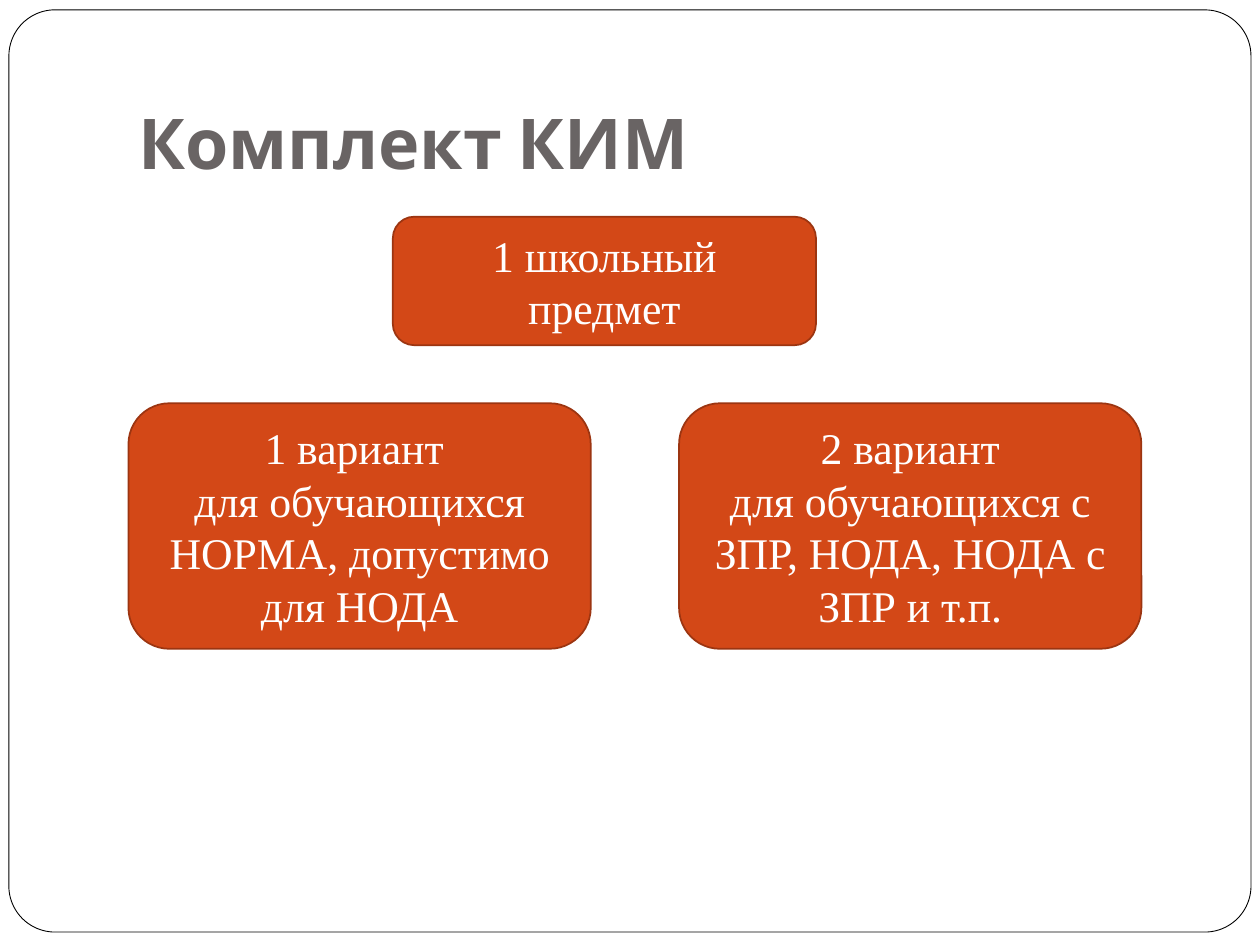
from typing import NamedTuple

from pptx import Presentation
from pptx.dml.color import RGBColor
from pptx.enum.shapes import MSO_SHAPE
from pptx.enum.text import MSO_ANCHOR, MSO_AUTO_SIZE, PP_ALIGN
from pptx.util import Cm, Pt

ROUND = MSO_SHAPE.ROUNDED_RECTANGLE
LEFT, CENTER = PP_ALIGN.LEFT, PP_ALIGN.CENTER
MIDDLE, BOTTOM = MSO_ANCHOR.MIDDLE, MSO_ANCHOR.BOTTOM
NO_FIT = MSO_AUTO_SIZE.NONE


class Area(NamedTuple):
    left: float
    top: float
    width: float
    height: float


class Card(NamedTuple):
    area: Area
    lines: list[str]


FRAME = Area(0.18, 0.2, 25.04, 18.59)
TITLE = Area(2.54, 0.76, 21.59, 3.18)
CARDS = [
    Card(Area(7.92, 4.37, 8.53, 2.59), ["1 школьный предмет"]),
    Card(Area(2.59, 8.13, 9.32, 4.95),
         ["1 вариант ", "для обучающихся НОРМА, допустимо для НОДА"]),
    Card(Area(13.69, 8.13, 9.32, 4.95),
         ["2 вариант", "для обучающихся с ЗПР, НОДА, НОДА с ЗПР и т.п."]),
]


def tint(color, code: str) -> None:
    """Set a fill or font colour from a hex string."""
    color.rgb = RGBColor.from_string(code)


def add_run(par, text: str, font: str, size: float, code: str, bold: bool = False) -> None:
    """Add one formatted run to a paragraph."""
    run = par.add_run()
    run.text = text
    run.font.name, run.font.size, run.font.bold = font, Pt(size), bold
    tint(run.font.color, code)


def add_round(slide, area: Area, fill: str, line: str, width: float):
    """Draw a flat rounded rectangle."""
    shape = slide.shapes.add_shape(ROUND, *map(Cm, area))
    shape.shadow.inherit = False
    shape.fill.solid()
    tint(shape.fill.fore_color, fill)
    tint(shape.line.color, line)
    shape.line.width = Pt(width)
    return shape


def add_card(slide, card: Card) -> None:
    """Draw a card with centred paragraphs."""
    frame = add_round(slide, card.area, "D34817", "9C3511", 1).text_frame
    frame.word_wrap = True
    frame.vertical_anchor = MIDDLE
    for i, line in enumerate(card.lines):
        par = frame.add_paragraph() if i else frame.paragraphs[0]
        par.alignment = CENTER
        add_run(par, line, "Times New Roman", 25, "FFFFFF")


def set_title(slide, text: str) -> None:
    """Place and format the title placeholder."""
    title = slide.shapes.title
    title.left, title.top, title.width, title.height = map(Cm, TITLE)
    frame = title.text_frame
    frame.auto_size = NO_FIT
    frame.word_wrap = True
    frame.vertical_anchor = BOTTOM
    frame.margin_bottom = Cm(0.25)
    par = frame.paragraphs[0]
    par.alignment = LEFT
    add_run(par, text, "Cabin", 40, "696464", True)


def main() -> None:
    """Build and save the slide."""
    deck = Presentation()
    deck.slide_width, deck.slide_height = Cm(25.4), Cm(19.05)
    slide = deck.slides.add_slide(deck.slide_layouts[5])
    border = add_round(slide, FRAME, "FFFFFF", "000000", 0.5)
    border.adjustments[0] = 0.05
    border.element.addnext(slide.shapes.title.element)
    set_title(slide, "Комплект КИМ")
    for card in CARDS:
        add_card(slide, card)
    deck.save("out.pptx")


if __name__ == "__main__":
    main()
